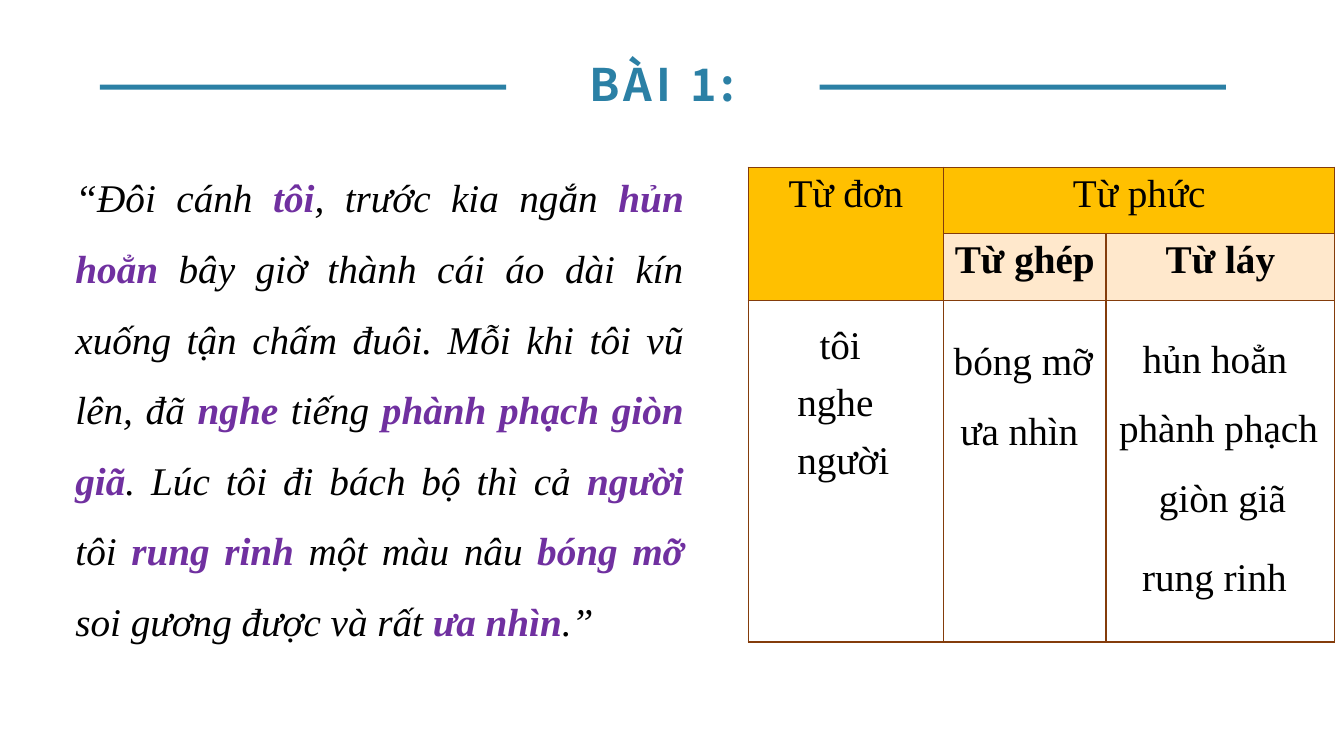
"""Build the exercise slide that sorts the words of a passage into simple and complex words."""
from dataclasses import dataclass

from lxml import etree
from pptx import Presentation
from pptx import util as u
from pptx.dml.color import RGBColor
from pptx.enum import shapes, text
from pptx.oxml import ns

SERIF, HEADING_FONT = "Times New Roman", "Noto Sans CJK SC"
BLACK, WHITE, TEAL, PURPLE = "000000", "FFFFFF", "2B80A5", "7030A0"
GOLD, PEACH, BROWN = "FFC000", "FFE8CC", "843C0B"
CENTER, JUSTIFY = text.PP_ALIGN.CENTER, text.PP_ALIGN.JUSTIFY


@dataclass
class Word:
    content: str
    left: float
    top: float
    width: float
    align: text.PP_ALIGN = CENTER


@dataclass
class Header:
    row: int
    column: int
    content: str
    bold: bool = False


WORDS = [
    Word("tôi", 8.03, 2.89, 0.76, JUSTIFY),
    Word("nghe", 7.81, 3.46, 1.21, JUSTIFY),
    Word("người", 7.81, 4.04, 1.21, JUSTIFY),
    Word("bóng mỡ", 9.25, 3.05, 1.8),
    Word("ưa nhìn", 9.21, 3.75, 1.8),
    Word("hủn hoẳn", 11.15, 3.03, 1.8),
    Word("phành phạch", 10.91, 3.72, 2.35),
    Word("giòn giã", 10.95, 4.41, 2.35),
    Word("rung rinh", 10.87, 5.2, 2.35),
]
HEADERS = [
    Header(0, 0, "Từ đơn"),
    Header(0, 1, "Từ phức"),
    Header(1, 1, "Từ ghép", True),
    Header(1, 2, "Từ láy", True),
]
CELL_FILLS = [[GOLD, GOLD, GOLD], [GOLD, PEACH, PEACH], [WHITE, WHITE, WHITE]]
COLUMN_WIDTHS = [1.94, 1.61, 2.27]
ROW_HEIGHTS = [0.66, 0.66, 3.39]
PASSAGE = (
    "“Đôi cánh *tôi*, trước kia ngắn *hủn hoẳn* bây giờ thành cái áo dài kín "
    "xuống tận chấm đuôi. Mỗi khi tôi vũ lên, đã *nghe* tiếng *phành phạch giòn giã*. "
    "Lúc tôi đi bách bộ thì cả *người* tôi *rung rinh* một màu nâu *bóng mỡ* "
    "soi gương được và rất *ưa nhìn*.”"
)


def color(value: str) -> RGBColor:
    return RGBColor.from_string(value)


def style_font(font, name: str, size: float, value: str, bold: bool = False) -> None:
    font.name, font.size, font.bold = name, u.Pt(size), bold
    font.color.rgb = color(value)


def add_title(slide) -> None:
    title = slide.shapes.title
    title.left, title.top = u.Inches(4.93), u.Inches(0.56)
    title.width, title.height = u.Inches(3.28), u.Inches(0.54)
    frame = title.text_frame
    frame.margin_left = frame.margin_right = frame.margin_top = frame.margin_bottom = 0
    frame.vertical_anchor = text.MSO_ANCHOR.MIDDLE
    frame.auto_size = text.MSO_AUTO_SIZE.SHAPE_TO_FIT_TEXT
    paragraph = frame.paragraphs[0]
    paragraph.alignment = CENTER
    style_font(paragraph.font, HEADING_FONT, 32, TEAL, True)
    run = paragraph.add_run()
    run.text = "BÀI 1:"
    run._r.get_or_add_rPr().set("spc", "300")


def add_title_bar(slide, left: float) -> None:
    bar = slide.shapes.add_shape(
        shapes.MSO_SHAPE.RECTANGLE, u.Inches(left), u.Inches(0.84), u.Inches(4.03), u.Inches(0.05)
    )
    bar.shadow.inherit = False
    bar.fill.solid()
    bar.fill.fore_color.rgb = color(TEAL)
    bar.line.fill.background()


def add_text_box(slide, left: float, top: float, width: float, height: float, align):
    box = slide.shapes.add_textbox(*map(u.Inches, (left, top, width, height)))
    frame = box.text_frame
    frame.word_wrap = True
    frame.auto_size = text.MSO_AUTO_SIZE.SHAPE_TO_FIT_TEXT
    paragraph = frame.paragraphs[0]
    paragraph.alignment, paragraph.line_spacing = align, 1.5
    style_font(paragraph.font, SERIF, 28, BLACK)
    return paragraph


def add_passage(slide) -> None:
    paragraph = add_text_box(slide, 0.65, 1.44, 6.23, 4.96, JUSTIFY)
    paragraph.font.italic = True
    for index, part in enumerate(PASSAGE.split("*")):
        run = paragraph.add_run()
        run.text = part
        if index % 2:
            run.font.bold = True
            run.font.color.rgb = color(PURPLE)


def add_borders(cell) -> None:
    properties = cell._tc.get_or_add_tcPr()
    for index, side in enumerate(("a:lnL", "a:lnR", "a:lnT", "a:lnB")):
        line = etree.Element(ns.qn(side), w=str(u.Pt(1)))
        fill = etree.SubElement(line, ns.qn("a:solidFill"))
        etree.SubElement(fill, ns.qn("a:srgbClr"), val=BROWN)
        properties.insert(index, line)


def add_word_table(slide) -> None:
    size = u.Inches(sum(COLUMN_WIDTHS)), u.Inches(sum(ROW_HEIGHTS))
    table = slide.shapes.add_table(3, 3, u.Inches(7.42), u.Inches(1.66), *size).table
    table.first_row = table.horz_banding = False
    for column, width in zip(table.columns, COLUMN_WIDTHS):
        column.width = u.Inches(width)
    for row, height, fills in zip(table.rows, ROW_HEIGHTS, CELL_FILLS):
        row.height = u.Inches(height)
        for cell, fill in zip(row.cells, fills):
            cell.fill.solid()
            cell.fill.fore_color.rgb = color(fill)
            add_borders(cell)
    table.cell(0, 0).merge(table.cell(1, 0))
    table.cell(0, 1).merge(table.cell(0, 2))
    for header in HEADERS:
        paragraph = table.cell(header.row, header.column).text_frame.paragraphs[0]
        paragraph.text = header.content
        paragraph.alignment = CENTER
        style_font(paragraph.font, SERIF, 28, BLACK, header.bold)


def main() -> None:
    presentation = Presentation()
    presentation.slide_width, presentation.slide_height = u.Inches(13.33), u.Inches(7.5)
    slide = presentation.slides.add_slide(presentation.slide_layouts.get_by_name("Title Only"))
    add_title(slide)
    for left in (0.99, 8.13):
        add_title_bar(slide, left)
    add_passage(slide)
    add_word_table(slide)
    for word in WORDS:
        paragraph = add_text_box(slide, word.left, word.top, word.width, 0.72, word.align)
        paragraph.text = word.content
    presentation.save("out.pptx")


if __name__ == "__main__":
    main()
